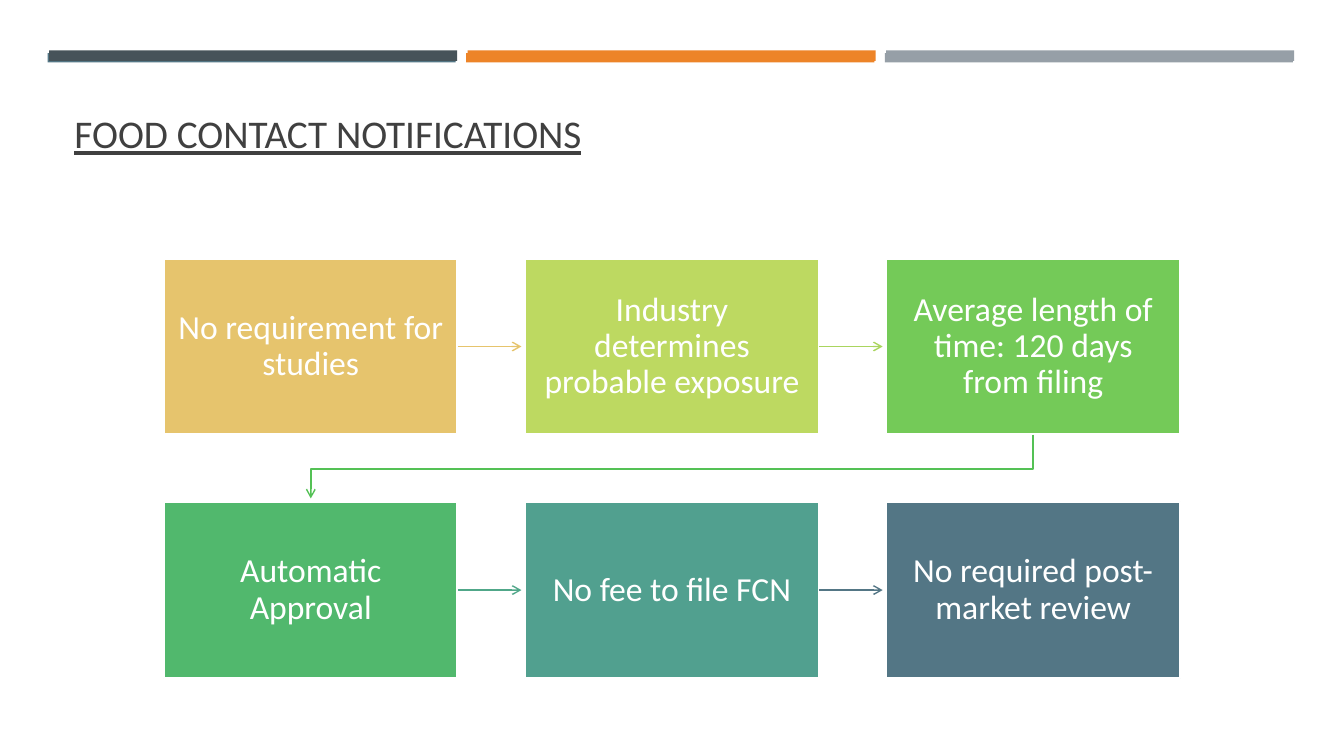
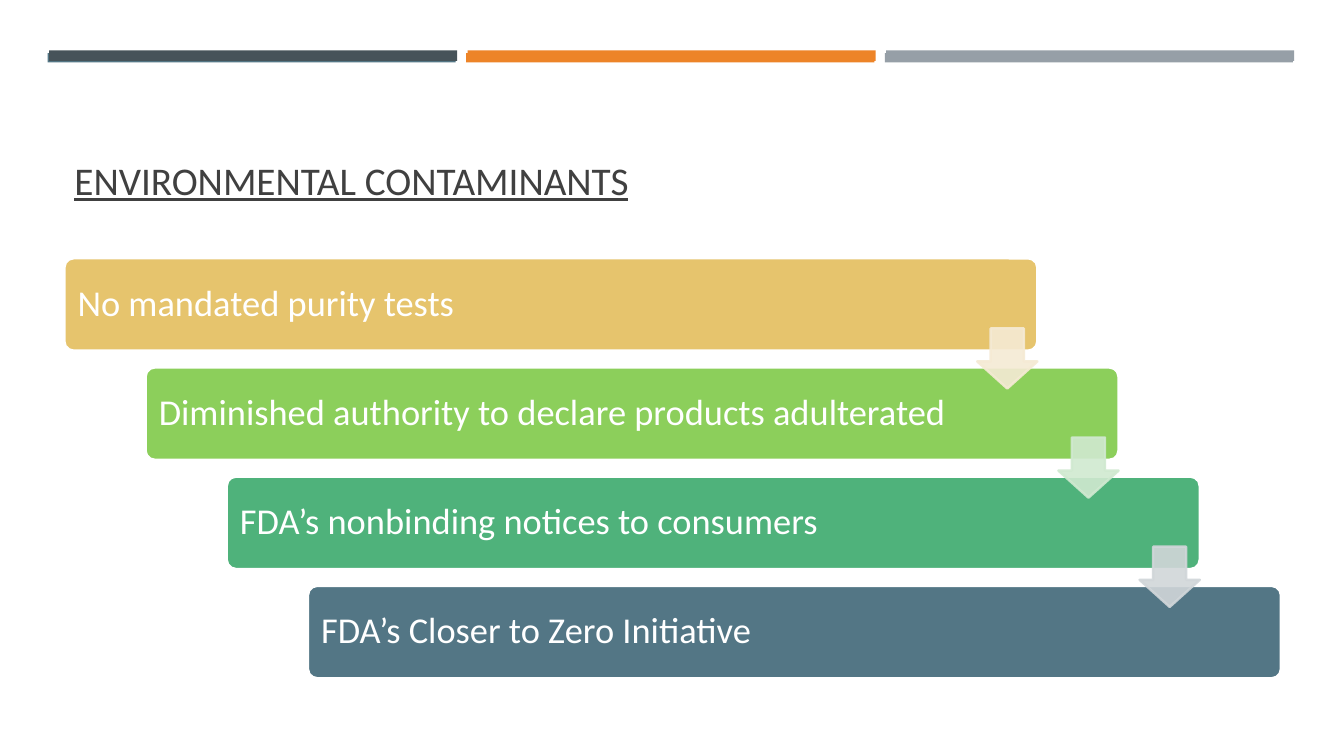
from lxml.etree import SubElement
from pptx import Presentation
from pptx.dml.color import RGBColor
from pptx.enum.shapes import MSO_CONNECTOR as Connector, MSO_SHAPE as Shape
from pptx.enum.text import MSO_ANCHOR as Anchor, MSO_AUTO_SIZE as AutoSize, PP_ALIGN as Align
from pptx.oxml.ns import qn
from pptx.util import Pt

WHITE = RGBColor(0xFF, 0xFF, 0xFF)
TITLE_GREY = RGBColor(0x40, 0x40, 0x40)
CHARCOAL = RGBColor(0x46, 0x53, 0x59)
ORANGE = RGBColor(0xED, 0x84, 0x28)
GREY = RGBColor(0x96, 0x9F, 0xA7)
SLATE = RGBColor(0x53, 0x76, 0x85)
GOLD = RGBColor(0xE6, 0xC4, 0x6D)
LIME = RGBColor(0xBD, 0xD9, 0x61)
LIME_LINE = RGBColor(0xAA, 0xD5, 0x5F)
APPLE = RGBColor(0x74, 0xCA, 0x58)
GREEN_LINE = RGBColor(0x54, 0xC1, 0x55)
GREEN = RGBColor(0x51, 0xB8, 0x6D)
TEAL_LINE = RGBColor(0x50, 0xA7, 0x89)
TEAL = RGBColor(0x51, 0xA0, 0x8F)
SPRING = RGBColor(0x8C, 0xCF, 0x5B)
JADE = RGBColor(0x4F, 0xB2, 0x7B)
PALE_GOLD = RGBColor(0xF5, 0xEA, 0xD4)
PALE_GREEN = RGBColor(0xD0, 0xE9, 0xD0)
PALE_SLATE = RGBColor(0xD1, 0xD6, 0xD9)

TOP = 184.5  # top of the content on both slides


class SlideBuilder:
    """Holds the deck's style and the slide being drawn; lengths are in points."""

    font = "Calibri"
    title_size = 28
    title_left, title_top, title_width = 46, 55.5, 868
    outline = 1.75

    def __init__(self, deck):
        self.deck = deck
        self.page = None

    def new_page(self, title, title_bottom):
        self.page = self.deck.slides.add_slide(self.deck.slide_layouts[5])
        self.bands(34, 38, 6.5, (SLATE, ORANGE, GREY))
        self.bands(35, 36, 7.5, (CHARCOAL, ORANGE, GREY))
        box = self.page.shapes.title
        box.left, box.top = Pt(self.title_left), Pt(self.title_top)
        box.width, box.height = Pt(self.title_width), Pt(title_bottom - self.title_top)
        box.text_frame.auto_size = AutoSize.NONE
        span = self.add_text(box, title, self.title_size, TITLE_GREY, Align.LEFT, Anchor.BOTTOM)
        span.font.underline = True

    def bands(self, left, top, height, colours):
        for column, colour in enumerate(colours):
            self.shape(Shape.RECTANGLE, left + 299 * column, top, 291.5, height, colour)

    def shape(self, kind, left, top, width, height, fill, line=None):
        item = self.page.shapes.add_shape(kind, Pt(left), Pt(top), Pt(width), Pt(height))
        item.shadow.inherit = False
        item.fill.solid()
        item.fill.fore_color.rgb = fill
        if line is None:
            item.line.fill.background()
        else:
            item.line.color.rgb = line
            item.line.width = Pt(self.outline)
        return item

    def add_text(self, box, text, size, colour, align, anchor):
        frame = box.text_frame
        frame.word_wrap = True
        frame.vertical_anchor = anchor
        para = frame.paragraphs[0]
        para.alignment = align
        span = para.add_run()
        span.text = text
        span.font.name, span.font.size = self.font, Pt(size)
        span.font.color.rgb = colour
        return span

    def text_box(self, kind, left, top, width, height, fill, text, size, align, inset):
        box = self.shape(kind, left, top, width, height, fill, WHITE)
        frame = box.text_frame
        frame.margin_left = frame.margin_right = Pt(inset)
        self.add_text(box, text, size, WHITE, align, Anchor.MIDDLE)
        frame.paragraphs[0].line_spacing = 0.9
        return box

    def arrow_line(self, item, colour):
        """Colour a thin line and give its far end an open arrowhead."""
        item.line.color.rgb = colour
        item.line.width = Pt(1)
        SubElement(item._element.spPr.find(qn("a:ln")), qn("a:tailEnd"), type="arrow")

    def arrow_from(self, box, length, colour):
        """Draw an arrow to the right from the middle of the box's right side."""
        start, middle = box.left + box.width, box.top + box.height // 2
        arrow = self.page.shapes.add_connector(
            Connector.STRAIGHT, start, middle, start + Pt(length), middle)
        arrow.begin_connect(box, 3)
        self.arrow_line(arrow, colour)
        SubElement(arrow._element.spPr, qn("a:effectLst"))

    def bent_arrow(self, points, colour):
        (first_x, first_y), *rest = [(Pt(x), Pt(y)) for x, y in points]
        builder = self.page.shapes.build_freeform(first_x, first_y)
        builder.add_line_segments(rest, close=False)
        item = builder.convert_to_shape()
        item.shadow.inherit = False
        item.fill.background()
        self.arrow_line(item, colour)

    def glass_arrow(self, left, top, size, colour):
        """Draw a slightly transparent block arrow pointing down."""
        arrow = self.shape(Shape.DOWN_ARROW, left, top, size, size, colour, colour)
        arrow.adjustments[0], arrow.adjustments[1] = 0.55, 0.45
        for tint in arrow._element.spPr.iter(qn("a:srgbClr")):
            SubElement(tint, qn("a:alpha"), val="90000")


def notifications(slide):
    slide.new_page("FOOD CONTACT NOTIFICATIONS", 115.5)
    left, width, height = 117, 210, 126
    column_step, row_step = 258, 174
    steps = (
        ("No requirement for studies", GOLD, GOLD),
        ("Industry determines probable exposure", LIME, LIME_LINE),
        ("Average length of time: 120 days from filing", APPLE, None),
        ("Automatic Approval", GREEN, TEAL_LINE),
        ("No fee to file FCN", TEAL, SLATE),
        ("No required post-market review", SLATE, None),
    )
    for index, (text, fill, arrow_colour) in enumerate(steps):
        row, column = divmod(index, 3)
        box = slide.text_box(
            Shape.RECTANGLE, left + column_step * column, TOP + row_step * row,
            width, height, fill, text, 24, Align.CENTER, 10)
        if arrow_colour is not None:
            slide.arrow_from(box, 45.5, arrow_colour)

    first_middle = left + width / 2
    last_middle = first_middle + 2 * column_step
    bend = TOP + height + 24.5
    slide.bent_arrow(
        [(last_middle, TOP + height), (last_middle, bend),
         (first_middle, bend), (first_middle, TOP + row_step - 2.5)], GREEN_LINE)


def contaminants(slide):
    slide.new_page("ENVIRONMENTAL CONTAMINANTS", 149)
    left, width, height = 46, 695, 66
    step_right, step_down = 58, 78
    arrow_size = 43
    bars = (
        ("No mandated purity tests", GOLD),
        ("Diminished authority to declare products adulterated", SPRING),
        ("FDA’s nonbinding notices to consumers", JADE),
        ("FDA’s Closer to Zero Initiative", SLATE),
    )
    for index, (text, fill) in enumerate(bars):
        bar = slide.text_box(
            Shape.ROUNDED_RECTANGLE, left + step_right * index, TOP + step_down * index,
            width, height, fill, text, 26, Align.LEFT, 7.5)
        bar.adjustments[0] = 0.1
    for index, colour in enumerate((PALE_GOLD, PALE_GREEN, PALE_SLATE)):
        slide.glass_arrow(
            left + width - arrow_size + step_right * index,
            TOP + 50 + step_down * index, arrow_size, colour)


def main():
    deck = Presentation()
    deck.slide_width, deck.slide_height = Pt(960), Pt(540)
    slide = SlideBuilder(deck)
    notifications(slide)
    contaminants(slide)
    deck.save("out.pptx")


if __name__ == "__main__":
    main()
